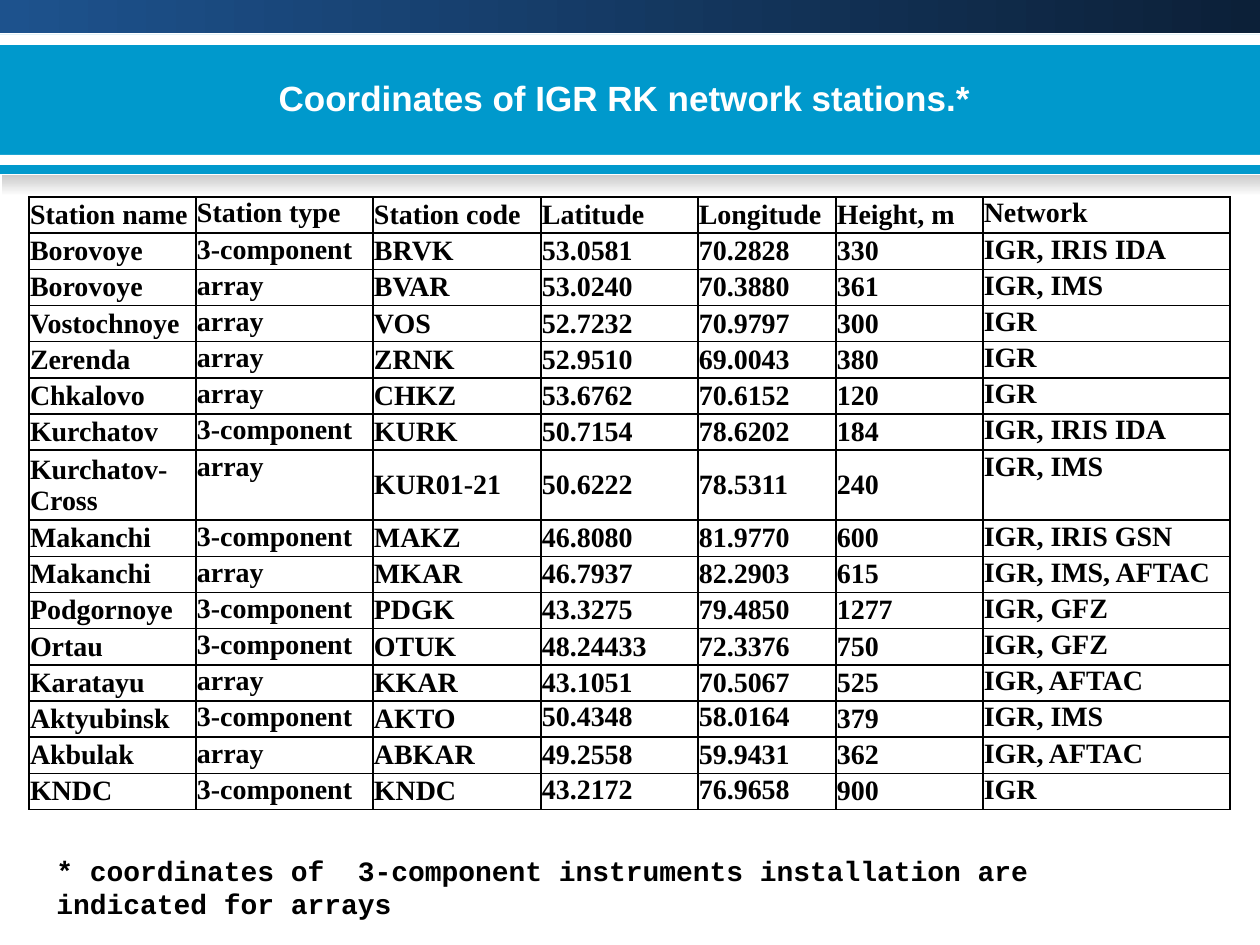
from lxml import etree
from pptx import Presentation
from pptx.dml.color import RGBColor
from pptx.enum.shapes import MSO_SHAPE
from pptx.enum.text import MSO_ANCHOR, MSO_AUTO_SIZE, PP_ALIGN
from pptx.oxml.ns import qn
from pptx.util import Pt

RECTANGLE = MSO_SHAPE.RECTANGLE
TOP, MIDDLE = MSO_ANCHOR.TOP, MSO_ANCHOR.MIDDLE
NO_AUTOFIT = MSO_AUTO_SIZE.NONE
LEFT = PP_ALIGN.LEFT

EMU_PER_PX = 914400 / 126
TITLE_ONLY_LAYOUT = 5

COLORS = {
    "band": "0099CC",
    "bar_start": "1D528D",
    "bar_end": "0C2038",
    "shade": "CACACA",
    "white": "FFFFFF",
    "black": "000000",
}

COLUMN_WIDTHS = [167, 177, 168, 157, 138, 147, 247]
TALL_ROW, TALL_ROW_HEIGHT = 7, 70
TOP_COLUMNS = {1, 6}
TOP_CELLS = {(row, column) for row in (13, 15) for column in (3, 4)}

STATIONS = [
    ["Station name", "Station type", "Station code", "Latitude", "Longitude", "Height, m", "Network"],
    ["Borovoye", "3-component", "BRVK", "53.0581", "70.2828", "330", "IGR, IRIS IDA"],
    ["Borovoye", "array", "BVAR", "53.0240", "70.3880", "361", "IGR, IMS"],
    ["Vostochnoye", "array", "VOS", "52.7232", "70.9797", "300", "IGR"],
    ["Zerenda", "array", "ZRNK", "52.9510", "69.0043", "380", "IGR"],
    ["Chkalovo", "array", "CHKZ", "53.6762", "70.6152", "120", "IGR"],
    ["Kurchatov", "3-component", "KURK", "50.7154", "78.6202", "184", "IGR, IRIS IDA"],
    ["Kurchatov-Cross", "array", "KUR01-21", "50.6222", "78.5311", "240", "IGR, IMS"],
    ["Makanchi", "3-component", "MAKZ", "46.8080", "81.9770", "600", "IGR, IRIS GSN"],
    ["Makanchi", "array", "MKAR", "46.7937", "82.2903", "615", "IGR, IMS, AFTAC"],
    ["Podgornoye", "3-component", "PDGK", "43.3275", "79.4850", "1277", "IGR, GFZ"],
    ["Ortau", "3-component", "OTUK", "48.24433", "72.3376", "750", "IGR, GFZ"],
    ["Karatayu", "array", "KKAR", "43.1051", "70.5067", "525", "IGR, AFTAC"],
    ["Aktyubinsk", "3-component", "AKTO", "50.4348", "58.0164", "379", "IGR, IMS"],
    ["Akbulak", "array", "ABKAR", "49.2558", "59.9431", "362", "IGR, AFTAC"],
    ["KNDC", "3-component", "KNDC", "43.2172", "76.9658", "900", "IGR"],
]


def px(length):
    return round(length * EMU_PER_PX)


def color(name):
    return RGBColor.from_string(COLORS[name])


def style_paragraph(paragraph, font_name, size, color_name):
    paragraph.alignment = LEFT
    font = paragraph.font
    font.name, font.size, font.bold = font_name, Pt(size), True
    font.color.rgb = color(color_name)


def add_bar(slide, box, *color_names, angle=0):
    """Add a borderless bar; two colours make a gradient."""
    bar = slide.shapes.add_shape(RECTANGLE, *map(px, box))
    bar.shadow.inherit = False
    bar.line.fill.background()
    if len(color_names) == 1:
        bar.fill.solid()
        bar.fill.fore_color.rgb = color(color_names[0])
    else:
        bar.fill.gradient()
        bar.fill.gradient_angle = angle
        for stop, name, position in zip(bar.fill.gradient_stops, color_names, (0, 1)):
            stop.color.rgb = color(name)
            stop.position = position


def add_header(slide, box):
    left, top, width, height = box
    # Bands and stripes
    add_bar(slide, (left, top + 35, width, 139), "band")
    add_bar(slide, (left, top, width, 33), "bar_start", "bar_end")
    add_bar(slide, (left + 2, top + 175, width - 2, height - 175), "shade", "white", angle=270)
    for stripe_top in (35, 155):
        add_bar(slide, (left, top + stripe_top, width, 10), "white")

    # Title, brought in front of the bands
    title = slide.shapes.title
    title.left, title.top = px(left + 266), px(top + 70)
    title.width, title.height = px(760), px(55)
    title.element.getparent().append(title.element)
    frame = title.text_frame
    frame.text = "Coordinates of IGR RK network stations.*"
    frame.auto_size = NO_AUTOFIT
    frame.word_wrap = False
    frame.vertical_anchor = MIDDLE
    style_paragraph(frame.paragraphs[0], "Arial", 20, "white")


def set_borders(cell):
    properties = cell._tc.get_or_add_tcPr()
    for position, side in enumerate(("a:lnL", "a:lnR", "a:lnT", "a:lnB")):
        line = etree.Element(qn(side), w=str(Pt(1)))
        fill = etree.SubElement(line, qn("a:solidFill"))
        etree.SubElement(fill, qn("a:srgbClr"), val=COLORS["black"])
        properties.insert(position, line)


def add_station_table(slide, box):
    height = box[3]
    frame = slide.shapes.add_table(len(STATIONS), len(COLUMN_WIDTHS), *map(px, box))
    table = frame.table
    table.first_row = table.horz_banding = False
    for column, width in zip(table.columns, COLUMN_WIDTHS):
        column.width = px(width)
    row_height = (height - TALL_ROW_HEIGHT) / (len(STATIONS) - 1)

    for row_index, values in enumerate(STATIONS):
        is_tall = row_index == TALL_ROW
        table.rows[row_index].height = px(TALL_ROW_HEIGHT if is_tall else row_height)
        for column_index, value in enumerate(values):
            cell = table.cell(row_index, column_index)
            cell.text = value
            cell.margin_left = cell.margin_right = px(1)
            cell.margin_top = cell.margin_bottom = px(1)
            at_top = column_index in TOP_COLUMNS or (row_index, column_index) in TOP_CELLS
            cell.vertical_anchor = TOP if at_top else MIDDLE
            cell.fill.background()
            set_borders(cell)
            style_paragraph(cell.text_frame.paragraphs[0], "Times New Roman", 16, "black")


def add_footnote(slide, box):
    frame = slide.shapes.add_textbox(*map(px, box)).text_frame
    frame.word_wrap = True
    frame.text = "* coordinates of  3-component instruments installation are indicated for arrays"
    style_paragraph(frame.paragraphs[0], "Courier New", 16, "black")


def main():
    presentation = Presentation()
    presentation.slide_width, presentation.slide_height = px(1260), px(945)
    slide = presentation.slides.add_slide(presentation.slide_layouts[TITLE_ONLY_LAYOUT])
    add_header(slide, (0, 0, 1260, 196))
    add_station_table(slide, (29, 197, sum(COLUMN_WIDTHS), 613))
    add_footnote(slide, (44, 847, 1142, 80))
    presentation.save("out.pptx")


if __name__ == "__main__":
    main()
